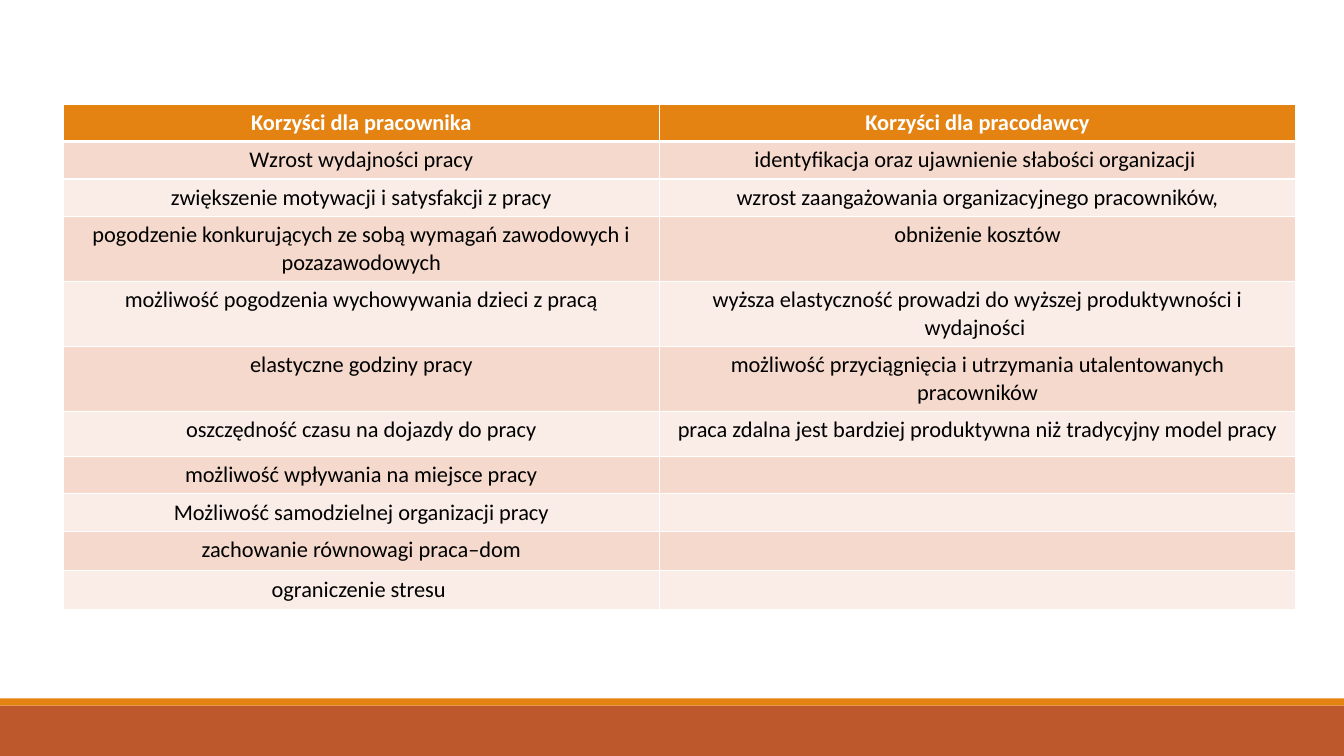
from lxml import etree
from pptx import Presentation
from pptx.dml.color import RGBColor
from pptx.enum.shapes import MSO_SHAPE
from pptx.enum.text import PP_ALIGN
from pptx.oxml.ns import qn
from pptx.util import Cm, Pt

COLORS = {
    "accent": "E48312",
    "footer": "BD582C",
    "odd_row": "F5D9CC",
    "even_row": "FAEDE7",
    "white": "FFFFFF",
    "black": "000000",
}
SLIDE_WIDTH, SLIDE_HEIGHT = 33.87, 19.05
COLUMN_WIDTHS = (15.01, 16.05)
ROW_HEIGHTS = (0.93, 0.93, 0.93, 1.63, 1.63, 1.63, 1.14, 0.93, 0.93, 0.99, 0.99)
BENEFITS = [
    ("Korzyści dla pracownika", "Korzyści dla pracodawcy"),
    ("Wzrost wydajności pracy", "identyfikacja oraz ujawnienie słabości organizacji "),
    ("zwiększenie motywacji i satysfakcji z pracy",
     "wzrost zaangażowania organizacyjnego pracowników,"),
    ("pogodzenie konkurujących ze sobą wymagań zawodowych i pozazawodowych",
     "obniżenie kosztów"),
    ("możliwość pogodzenia wychowywania dzieci z pracą",
     "wyższa elastyczność prowadzi do wyższej produktywności i wydajności "),
    ("elastyczne godziny pracy",
     "możliwość przyciągnięcia i utrzymania utalentowanych pracowników"),
    ("oszczędność czasu na dojazdy do pracy",
     "praca zdalna jest bardziej produktywna niż tradycyjny model pracy"),
    ("możliwość wpływania na miejsce pracy", ""),
    ("Możliwość samodzielnej organizacji pracy", ""),
    ("zachowanie równowagi praca–dom", ""),
    ("ograniczenie stresu ", ""),
]


def color(name):
    return RGBColor.from_string(COLORS[name])


def add_bar(slide, top, height, fill):
    bar = slide.shapes.add_shape(
        MSO_SHAPE.RECTANGLE, 0, Cm(top), Cm(SLIDE_WIDTH), Cm(height))
    bar.shadow.inherit = False
    bar.fill.solid()
    bar.fill.fore_color.rgb = color(fill)
    bar.line.fill.background()


def set_borders(cell, widths):
    """Draw white borders; widths maps the sides L, R, T, B to points."""
    properties = cell._tc.get_or_add_tcPr()
    for side, width in widths.items():
        border = etree.SubElement(properties, qn(f"a:ln{side}"), w=str(Pt(width)))
        fill = etree.SubElement(border, qn("a:solidFill"))
        etree.SubElement(fill, qn("a:srgbClr"), val=COLORS["white"])


def format_cell(cell, text, row):
    is_header = row == 0
    set_borders(cell, {"L": 1, "R": 1,
                       "T": 3 if row == 1 else 1,
                       "B": 3 if is_header else 1})
    cell.fill.solid()
    band = "odd_row" if row % 2 else "even_row"
    cell.fill.fore_color.rgb = color("accent" if is_header else band)
    cell.text = text
    paragraph = cell.text_frame.paragraphs[0]
    paragraph.alignment = PP_ALIGN.CENTER
    font = paragraph.font
    font.name = "Calibri"
    font.size = Pt(16)
    font.bold = is_header
    font.color.rgb = color("white" if is_header else "black")


def add_benefits_table(slide):
    table = slide.shapes.add_table(
        len(BENEFITS), len(COLUMN_WIDTHS), Cm(1.6), Cm(2.62),
        Cm(sum(COLUMN_WIDTHS)), Cm(sum(ROW_HEIGHTS))).table
    for column, width in zip(table.columns, COLUMN_WIDTHS):
        column.width = Cm(width)
    for index, (row, height, texts) in enumerate(
            zip(table.rows, ROW_HEIGHTS, BENEFITS)):
        row.height = Cm(height)
        for cell, text in zip(row.cells, texts):
            format_cell(cell, text, index)


def main():
    presentation = Presentation()
    presentation.slide_width = Cm(SLIDE_WIDTH)
    presentation.slide_height = Cm(SLIDE_HEIGHT)
    slide = presentation.slides.add_slide(presentation.slide_layouts[6])
    add_bar(slide, 17.78, 1.27, "footer")
    add_bar(slide, 17.6, 0.18, "accent")
    add_benefits_table(slide)
    presentation.save("out.pptx")


if __name__ == "__main__":
    main()
